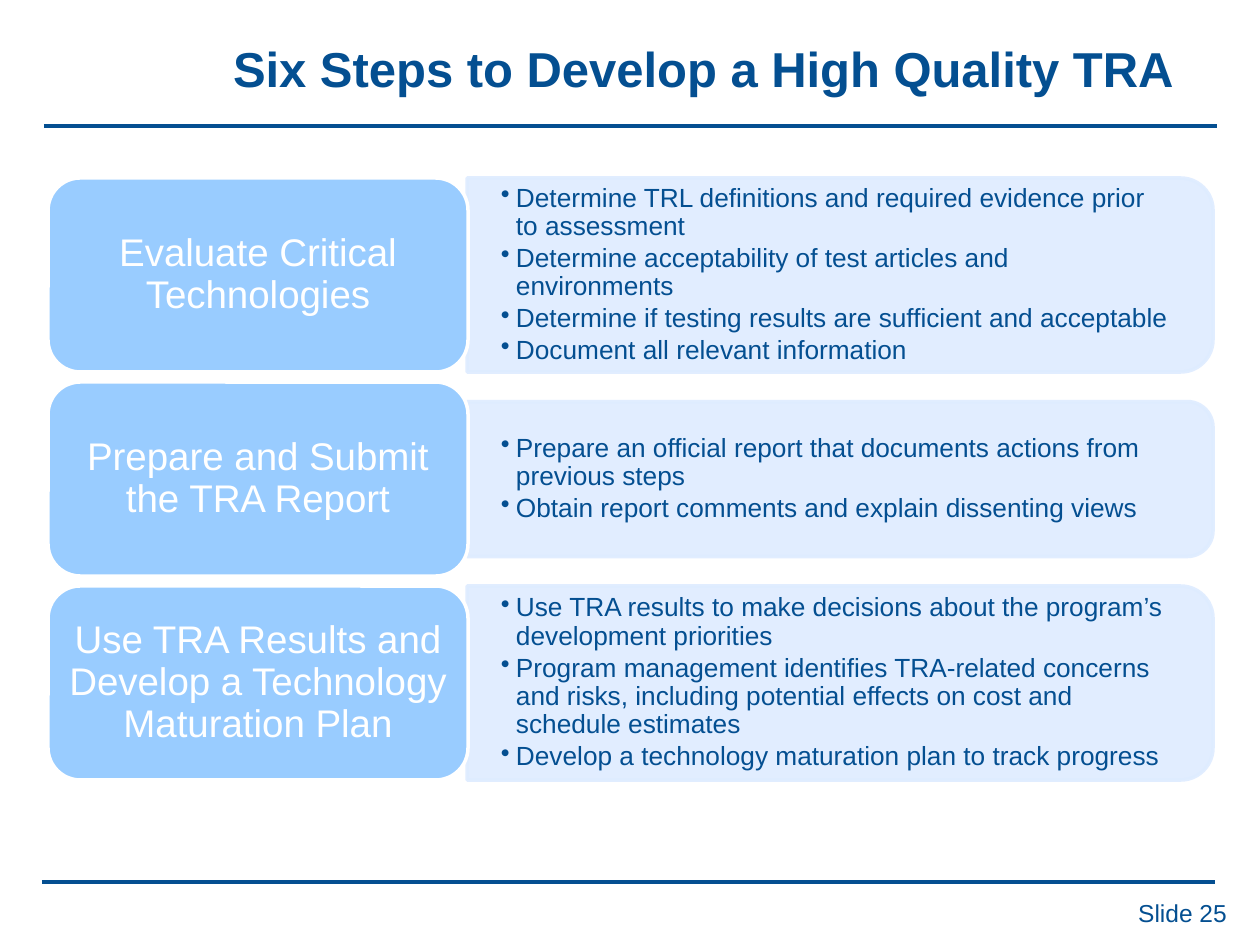
"""Build the slide on the steps to develop a high quality TRA."""
from lxml.etree import SubElement
from pptx import Presentation
from pptx.dml.color import RGBColor
from pptx.enum.shapes import MSO_CONNECTOR, MSO_SHAPE
from pptx.enum.text import MSO_ANCHOR, PP_ALIGN
from pptx.oxml.ns import qn
from pptx.util import Emu, Pt

NAVY, SKY, PALE, WHITE = "044F91", "99CCFF", "DEECFF", "FFFFFF"
PX = 914400 / 126
PITCH = 204
STEPS = [
    ("Evaluate Critical Technologies", 194, [
        "Determine TRL definitions and required evidence prior to assessment",
        "Determine acceptability of test articles and environments",
        "Determine if testing results are sufficient and acceptable",
        "Document all relevant information"]),
    ("Prepare and Submit the TRA Report", 155, [
        "Prepare an official report that documents actions from previous steps",
        "Obtain report comments and explain dissenting views"]),
    ("Use TRA Results and Develop a Technology Maturation Plan", 194, [
        "Use TRA results to make decisions about the program’s development priorities",
        "Program management identifies TRA-related concerns and risks, including "
        "potential effects on cost and schedule estimates",
        "Develop a technology maturation plan to track progress"]),
]


def px(*values):
    return [Emu(round(v * PX)) for v in values]


def write(sp, *texts, size, color=NAVY, bold=False, align=PP_ALIGN.LEFT,
          anchor=MSO_ANCHOR.MIDDLE, inset=(13, 6), spacing=1.0, bullet=False):
    tf = sp.text_frame
    tf.word_wrap = True
    tf.vertical_anchor = anchor
    tf.margin_left, tf.margin_top = tf.margin_right, tf.margin_bottom = px(*inset)
    for i, text in enumerate(texts):
        p = tf.paragraphs[0] if i == 0 else tf.add_paragraph()
        p.alignment = align
        p.line_spacing = spacing
        if bullet:
            p.space_after = Pt(2)
            pPr = p._p.get_or_add_pPr()
            indent = px(15)[0]
            pPr.set("marL", str(indent))
            pPr.set("indent", str(-indent))
            SubElement(pPr, qn("a:buChar"), char="•")
        r = p.add_run()
        r.text = text
        r.font.name = "Arial"
        r.font.size = Pt(size)
        r.font.bold = bold
        r.font.color.rgb = RGBColor.from_string(color)


prs = Presentation()
prs.slide_width, prs.slide_height = px(1260, 945)
s = prs.slides.add_slide(prs.slide_layouts[5])

title = s.shapes.title
title.left, title.top, title.width, title.height = px(220, 5, 1174, 126)
write(title, "Six Steps to Develop a High Quality TRA", size=28, bold=True)

for x, y in [(44, 126), (42, 882)]:
    rule = s.shapes.add_connector(MSO_CONNECTOR.STRAIGHT, *px(x, y, x + 1173, y))
    rule.line.color.rgb = RGBColor.from_string(NAVY)
    rule.line.width = Pt(2.5)
    SubElement(rule._element.spPr, qn("a:effectLst"))

number = s.shapes.add_textbox(*px(1061, 892, 179, 43))
write(number, "Slide 25", size=14, align=PP_ALIGN.RIGHT, anchor=MSO_ANCHOR.TOP)

for i, (step, height, points) in enumerate(STEPS):
    middle = 275 + i * PITCH
    panel = s.shapes.add_shape(MSO_SHAPE.ROUND_2_SAME_RECTANGLE,
                               *px(840 - height / 2, middle - 373, height, 746))
    panel.rotation = 90
    box = s.shapes.add_shape(MSO_SHAPE.ROUNDED_RECTANGLE,
                             *px(48, middle - 97, 420, 194))
    for sp, fill, line in [(panel, PALE, PALE), (box, SKY, WHITE)]:
        sp.shadow.inherit = False
        sp.fill.solid()
        sp.fill.fore_color.rgb = RGBColor.from_string(fill)
        sp.line.color.rgb = RGBColor.from_string(line)
        sp.line.width = Pt(2)
    for color in panel._element.spPr.iter(qn("a:srgbClr")):
        SubElement(color, qn("a:alpha"), val="90000")
    write(box, step, size=22, color=WHITE, align=PP_ALIGN.CENTER,
          inset=(11, 6), spacing=0.9)
    details = s.shapes.add_textbox(*px(467, middle - height / 2 + 9, 738, height - 18))
    write(details, *points, size=15, inset=(34, 0), spacing=0.9, bullet=True)

prs.save("out.pptx")
